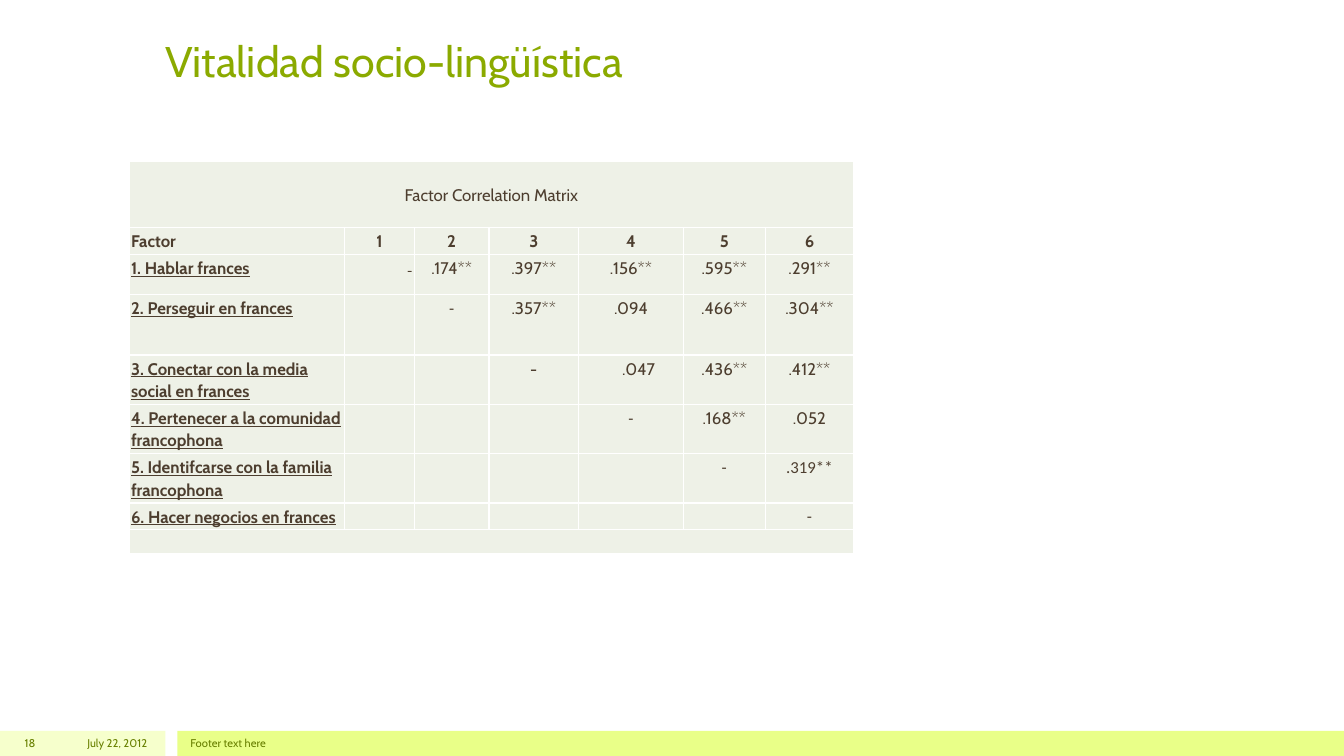
from dataclasses import dataclass

from lxml import etree
from pptx import Presentation
from pptx.dml.color import RGBColor
from pptx.enum.shapes import MSO_SHAPE
from pptx.enum.text import MSO_ANCHOR, PP_ALIGN
from pptx.oxml.ns import qn
from pptx.util import Inches, Pt

RECT = MSO_SHAPE.RECTANGLE
TOP, MIDDLE, BOTTOM = MSO_ANCHOR.TOP, MSO_ANCHOR.MIDDLE, MSO_ANCHOR.BOTTOM
LEFT, CENTER, RIGHT = PP_ALIGN.LEFT, PP_ALIGN.CENTER, PP_ALIGN.RIGHT


@dataclass(frozen=True)
class Theme:
    font: str = "Cabin"
    alt_font: str = "Calibri"
    title: str = "8BAA00"
    body: str = "4D3E2F"
    footer: str = "688000"
    pale_bar: str = "F6FFCC"
    bright_bar: str = "E9FF88"
    cell: str = "EEF1E7"
    border: str = "FFFFFF"
    title_size: float = 30.6
    body_size: float = 12
    small_size: float = 9
    footer_size: float = 8
    leading: float = 16


THEME = Theme()

COL_WIDTHS = [2.14, 0.69, 0.74, 0.89, 1.04, 0.81, 0.88]
ROW_HEIGHTS = [0.66, 0.26, 0.4, 0.6, 0.49, 0.49, 0.49, 0.26, 0.24]
HEADERS = ["Factor", "1", "2", "3", "4", "5", "6"]
FACTORS = [
    ("1. Hablar frances", ["-", ".174**", ".397**", ".156**", ".595**", ".291**"]),
    ("2. Perseguir en frances", ["-", ".357**", ".094", ".466**", ".304**"]),
    ("3. Conectar con la media social en frances", ["-", ".047", ".436**", ".412**"]),
    ("4. Pertenecer a la comunidad francophona", ["-", ".168**", ".052"]),
    ("5. Identifcarse con la familia francophona", ["-", ".319**"]),
    ("6. Hacer negocios en frances", ["-"]),
]
ALT_FONT_CELLS = {(2, 2), (4, 4), (5, 5), (5, 6), (6, 6)}


def style_font(font, size, color, name=THEME.font):
    font.name = name
    font.size = Pt(size)
    font.color.rgb = RGBColor.from_string(color)


def add_text(slide, box, text, size, color, align=LEFT, anchor=MIDDLE):
    tf = slide.shapes.add_textbox(*map(Inches, box)).text_frame
    tf.word_wrap = True
    tf.vertical_anchor = anchor
    p = tf.paragraphs[0]
    p.text = text
    p.alignment = align
    style_font(p.font, size, color)


def add_bar(slide, box, color):
    s = slide.shapes.add_shape(RECT, *map(Inches, box))
    s.shadow.inherit = False
    s.fill.solid()
    s.fill.fore_color.rgb = RGBColor.from_string(color)
    s.line.fill.background()


def add_footer(slide, left, top, width, height):
    bright_left = left + 1.76
    add_bar(slide, (left, top, 1.64, height), THEME.pale_bar)
    add_bar(slide, (bright_left, top, width - 1.76, height), THEME.bright_bar)
    for offset, w, text, align in [
        (0.47, 1.09, "July 22, 2012", RIGHT),
        (1.79, 10, "Footer text here", LEFT),
        (0, 0.45, "18", RIGHT),
    ]:
        add_text(slide, (left + offset, top, w, height), text,
                 THEME.footer_size, THEME.footer, align)


def style_cell(cell):
    cell.margin_left = cell.margin_right = Inches(0.02)
    cell.margin_top = cell.margin_bottom = Inches(0.02)
    tc_pr = cell._tc.get_or_add_tcPr()
    for side in ("a:lnL", "a:lnR", "a:lnT", "a:lnB"):
        ln = etree.SubElement(tc_pr, qn(side), w=str(Pt(1)))
        fill = etree.SubElement(ln, qn("a:solidFill"))
        etree.SubElement(fill, qn("a:srgbClr"), val=THEME.border)
    cell.fill.solid()
    cell.fill.fore_color.rgb = RGBColor.from_string(THEME.cell)
    p = cell.text_frame.paragraphs[0]
    p.line_spacing = Pt(THEME.leading)
    style_font(p.font, THEME.body_size, THEME.body)


def write_cell(cell, text, align=CENTER, anchor=TOP, bold=False, underline=False):
    cell.vertical_anchor = anchor
    p = cell.text_frame.paragraphs[0]
    p.text = text
    p.alignment = align
    p.font.bold = bold
    p.font.underline = underline
    return p


def add_correlation_table(slide, left, top, width, height):
    frame = slide.shapes.add_table(len(ROW_HEIGHTS), len(COL_WIDTHS),
                                   *map(Inches, (left, top, width, height)))
    table = frame.table
    table.first_row = table.horz_banding = False
    for col, w in zip(table.columns, COL_WIDTHS):
        col.width = Inches(w)
    for row, h in zip(table.rows, ROW_HEIGHTS):
        row.height = Inches(h)
    for cell in table.iter_cells():
        style_cell(cell)

    last_row, last_col = len(ROW_HEIGHTS) - 1, len(COL_WIDTHS) - 1
    for r in (0, last_row):
        table.cell(r, 0).merge(table.cell(r, last_col))
    write_cell(table.cell(0, 0), "Factor Correlation Matrix", anchor=MIDDLE)

    for c, header in enumerate(HEADERS):
        write_cell(table.cell(1, c), header, CENTER if c else LEFT, BOTTOM, bold=True)

    for n, (factor, values) in enumerate(FACTORS, start=1):
        write_cell(table.cell(n + 1, 0), factor, LEFT, bold=True, underline=True)
        for c, value in enumerate(values, start=n):
            p = write_cell(table.cell(n + 1, c), value)
            if (n, c) in ALT_FONT_CELLS:
                p.font.name = THEME.alt_font

    first_dash = table.cell(2, 1).text_frame.paragraphs[0]
    first_dash.alignment = RIGHT
    first_dash.font.size = Pt(THEME.small_size)
    table.cell(4, 4).margin_left = Inches(0.17)


def main():
    prs = Presentation()
    prs.slide_width, prs.slide_height = Inches(13.33), Inches(7.5)
    slide = prs.slides.add_slide(prs.slide_layouts[6])
    add_text(slide, (1.54, 0.3, 10.25, 0.6), "Vitalidad socio-lingüística",
             THEME.title_size, THEME.title, anchor=BOTTOM)
    add_correlation_table(slide, 1.28, 1.6, sum(COL_WIDTHS), sum(ROW_HEIGHTS))
    add_footer(slide, 0, 7.25, 13.33, 0.25)
    prs.save("out.pptx")


if __name__ == "__main__":
    main()
